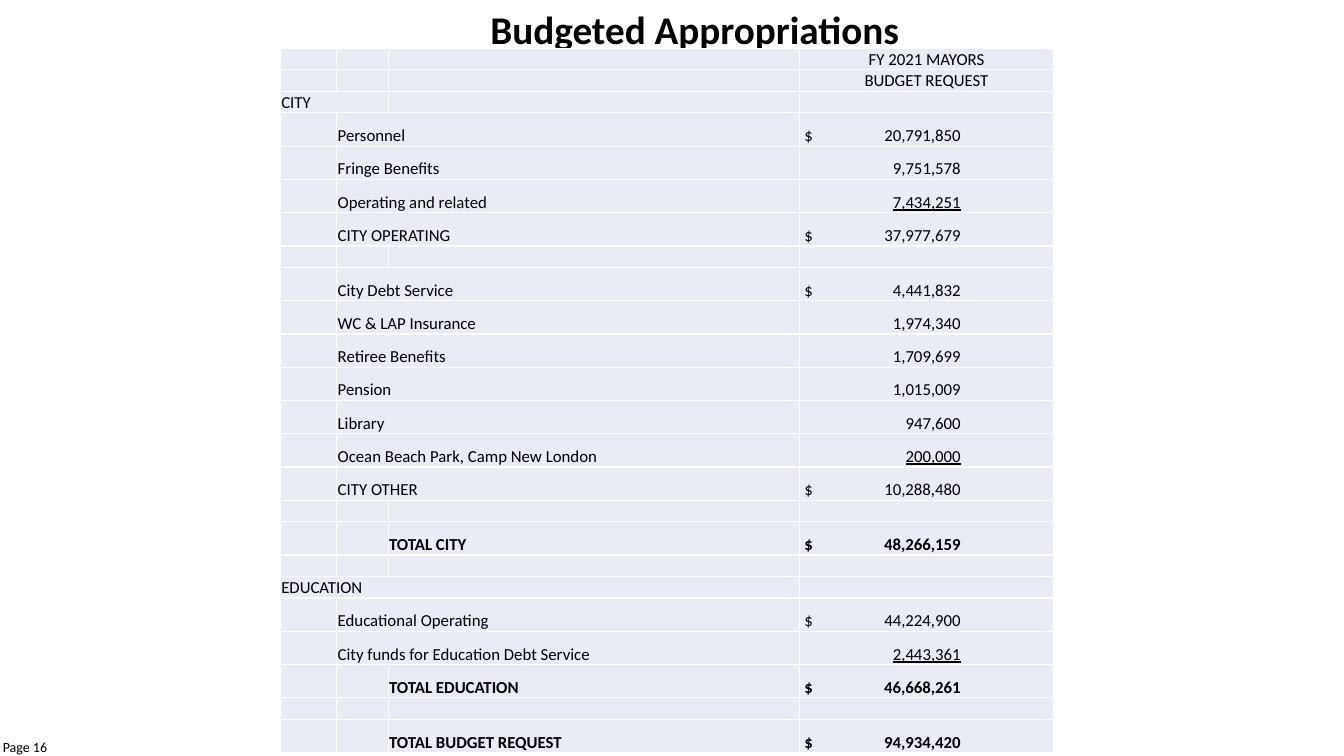
from lxml import etree
from pptx import Presentation
from pptx import util as u
from pptx.dml.color import RGBColor
from pptx.enum import text
from pptx.oxml import ns

COLORS = {"text": "000000", "cell": "E9EBF5", "border": "FFFFFF"}
COLUMNS = [0.56, 0.51, 4.08, 2.52]
AMOUNT = len(COLUMNS) - 1
SHORT, TALL = 0.2, 0.33

# (label column, columns spanned, label, amount, style)
ROWS = [
    (0, 1, "", "FY 2021 MAYORS", "head"),
    (0, 1, "", "BUDGET REQUEST", "head"),
    (0, 2, "CITY", "", ""),
    (1, 2, "Personnel", " $\t20,791,850", ""),
    (1, 2, "Fringe Benefits", "\t9,751,578", ""),
    (1, 2, "Operating and related", "\t7,434,251", "underline"),
    (1, 2, "CITY OPERATING", " $\t37,977,679", ""),
    (0, 1, "", "", ""),
    (1, 2, "City Debt Service", " $\t4,441,832", ""),
    (1, 2, "WC & LAP Insurance", "\t1,974,340", ""),
    (1, 2, "Retiree Benefits", "\t1,709,699", ""),
    (1, 2, "Pension", "\t1,015,009", ""),
    (1, 2, "Library", "\t947,600", ""),
    (1, 2, "Ocean Beach Park, Camp New London", "\t200,000", "underline"),
    (1, 2, "CITY OTHER", " $\t10,288,480", ""),
    (0, 1, "", "", ""),
    (2, 1, "TOTAL CITY", " $\t48,266,159", "bold"),
    (0, 1, "", "", ""),
    (0, 3, "EDUCATION", "", ""),
    (1, 2, "Educational Operating", " $\t44,224,900", ""),
    (1, 2, "City funds for Education Debt Service", "\t2,443,361", "underline"),
    (2, 1, "TOTAL EDUCATION", " $\t46,668,261", "bold"),
    (0, 1, "", "", ""),
    (2, 1, "TOTAL BUDGET REQUEST", " $\t94,934,420", "bold"),
]


class Deck:
    font = "Calibri"

    def __init__(self):
        self.prs = Presentation()
        self.prs.slide_width, self.prs.slide_height = u.Inches(13.33), u.Inches(7.5)
        self.s = self.prs.slides.add_slide(self.prs.slide_layouts[5])

    def run(self, p, words, size, bold=False, underline=False):
        r = p.add_run()
        r.text = words
        r.font.name, r.font.size = self.font, u.Pt(size)
        r.font.bold, r.font.underline = bold, underline
        r.font.color.rgb = RGBColor.from_string(COLORS["text"])

    def title(self, words, x, y, w, h):
        sp = self.s.shapes.title
        sp.left, sp.top, sp.width, sp.height = map(u.Inches, (x, y, w, h))
        tf = sp.text_frame
        tf.auto_size = text.MSO_AUTO_SIZE.NONE
        tf.vertical_anchor = text.MSO_ANCHOR.MIDDLE
        p = tf.paragraphs[0]
        p.alignment = text.PP_ALIGN.CENTER
        self.run(p, words, 28, bold=True)

    def label(self, words, x, y, w, h):
        tf = self.s.shapes.add_textbox(*map(u.Inches, (x, y, w, h))).text_frame
        tf.word_wrap = True
        self.run(tf.paragraphs[0], words, 10)

    def borders(self, cell):
        tc_pr = cell._tc.get_or_add_tcPr()
        for side in ("lnL", "lnR", "lnT", "lnB"):
            ln = etree.SubElement(tc_pr, ns.qn("a:" + side), w=str(u.Pt(1)))
            fill = etree.SubElement(ln, ns.qn("a:solidFill"))
            etree.SubElement(fill, ns.qn("a:srgbClr"), val=COLORS["border"])

    def format_cell(self, cell):
        self.borders(cell)
        cell.fill.solid()
        cell.fill.fore_color.rgb = RGBColor.from_string(COLORS["cell"])
        cell.margin_left = cell.margin_right = cell.margin_top = u.Inches(0.01)
        cell.margin_bottom = 0
        cell.vertical_anchor = text.MSO_ANCHOR.BOTTOM
        end = cell.text_frame.paragraphs[0]._p.get_or_add_endParaRPr()
        end.set("sz", "1200")

    def right_tab(self, p, pos):
        """Align the text after a tab to the right at pos inches."""
        tabs = etree.SubElement(p._p.get_or_add_pPr(), ns.qn("a:tabLst"))
        etree.SubElement(tabs, ns.qn("a:tab"), pos=str(u.Inches(pos)), algn="r")

    def budget_table(self, x, y):
        heights = [TALL if "\t" in row[3] else SHORT for row in ROWS]
        frame = self.s.shapes.add_table(
            len(ROWS), len(COLUMNS), u.Inches(x), u.Inches(y),
            u.Inches(sum(COLUMNS)), u.Inches(sum(heights)))
        table = frame.table
        table.first_row = table.horz_banding = False
        for column, width in zip(table.columns, COLUMNS):
            column.width = u.Inches(width)
        for i, (col, span, label, amount, style) in enumerate(ROWS):
            table.rows[i].height = u.Inches(heights[i])
            for c in range(len(COLUMNS)):
                self.format_cell(table.cell(i, c))
            if span > 1:
                table.cell(i, col).merge(table.cell(i, col + span - 1))
            bold = style == "bold"
            if label:
                p = table.cell(i, col).text_frame.paragraphs[0]
                self.run(p, label, 12, bold)
            if amount:
                p = table.cell(i, AMOUNT).text_frame.paragraphs[0]
                if style == "head":
                    p.alignment = text.PP_ALIGN.CENTER
                else:
                    self.right_tab(p, 1.59)
                self.run(p, amount, 12, bold, style == "underline")


def main():
    deck = Deck()
    deck.title("Budgeted Appropriations", 4.38, 0, 5.02, 0.57)
    deck.budget_table(2.78, 0.48)
    deck.label("Page 16", -0.07, 7.28, 0.73, 0.27)
    deck.prs.save("out.pptx")


if __name__ == "__main__":
    main()
